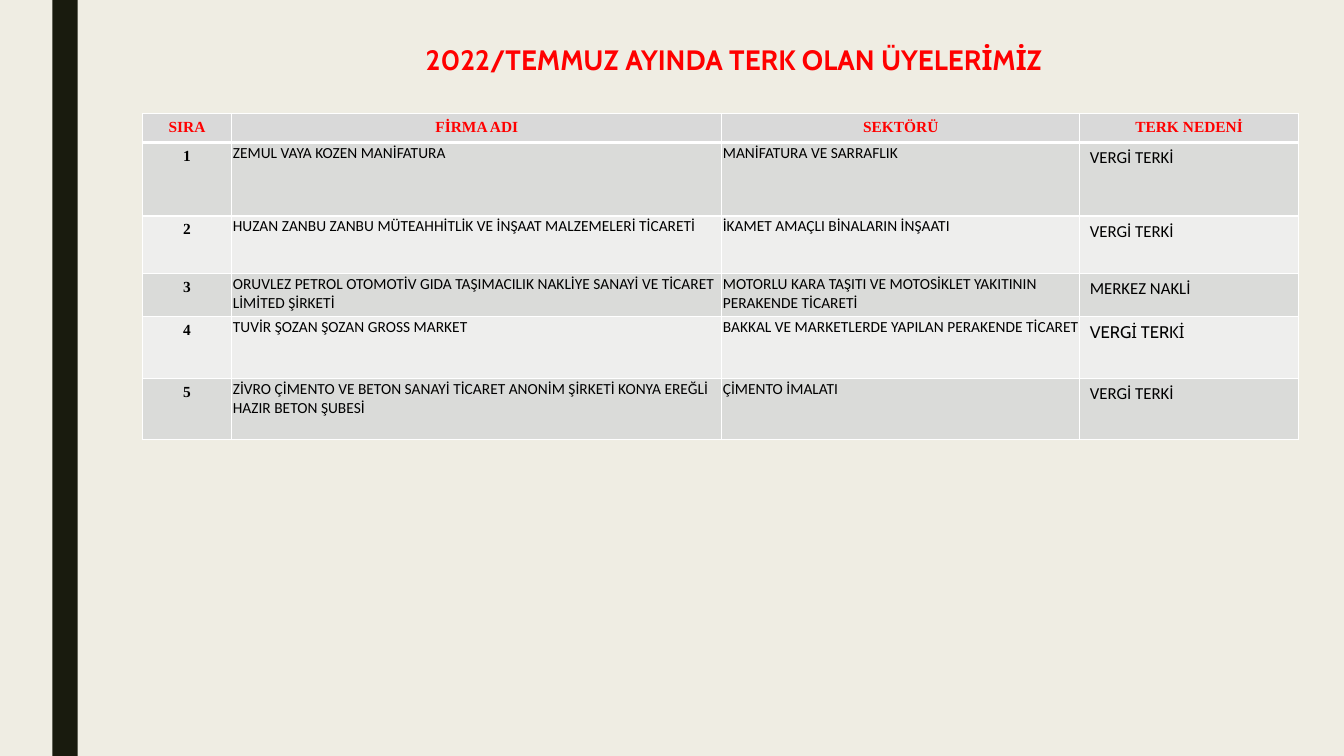
from dataclasses import dataclass

from lxml import etree
from pptx import Presentation
from pptx import util as u
from pptx.dml.color import RGBColor
from pptx.enum import shapes, text
from pptx.oxml import ns

COLORS = {
    "background": "EFEDE3", "bar": "191B0E", "accent": "FF0000", "ink": "000000",
    "header": "D9D9D9", "odd": "DADBD9", "even": "EEEEED", "border": "FFFFFF",
}
SERIF, SANS, DISPLAY = "Times New Roman", "Calibri", "Cabin"
HEADINGS = ["SIRA", "FİRMA ADI", "SEKTÖRÜ", "TERK NEDENİ"]
COL_WIDTHS = [0.89, 4.86, 3.55, 2.17]
HEADER_HEIGHT = 0.27


@dataclass
class Member:
    firm: str
    sector: str
    reason: str
    height: float
    reason_font: str = SANS


MEMBERS = [
    Member("ZEMUL VAYA KOZEN MANİFATURA", "MANİFATURA VE SARRAFLIK", "VERGİ TERKİ", 0.73),
    Member("HUZAN ZANBU ZANBU MÜTEAHHİTLİK VE İNŞAAT MALZEMELERİ TİCARETİ",
           "İKAMET AMAÇLI BİNALARIN İNŞAATI", "VERGİ TERKİ", 0.57),
    Member("ORUVLEZ PETROL OTOMOTİV GIDA TAŞIMACILIK NAKLİYE SANAYİ VE TİCARET LİMİTED ŞİRKETİ",
           "MOTORLU KARA TAŞITI VE MOTOSİKLET YAKITININ PERAKENDE TİCARETİ", "MERKEZ NAKLİ", 0.43),
    Member("TUVİR ŞOZAN ŞOZAN GROSS MARKET",
           "BAKKAL VE MARKETLERDE YAPILAN PERAKENDE TİCARET", "VERGİ TERKİ", 0.61, DISPLAY),
    Member("ZİVRO ÇİMENTO VE BETON SANAYİ TİCARET ANONİM ŞİRKETİ KONYA EREĞLİ HAZIR BETON ŞUBESİ",
           "ÇİMENTO İMALATI", "VERGİ TERKİ", 0.61),
]


def rgb(name: str) -> RGBColor:
    return RGBColor.from_string(COLORS[name])


def write(tf, content: str, *, font: str = SANS, size: float = 11, color: str = "ink",
          bold: bool = False, center: bool = False, spacing: float | None = None) -> None:
    p = tf.paragraphs[0]
    p.alignment = text.PP_ALIGN.CENTER if center else text.PP_ALIGN.LEFT
    p.line_spacing = spacing
    r = p.add_run()
    r.text = content
    r.font.name, r.font.size, r.font.bold = font, u.Pt(size), bold
    r.font.color.rgb = rgb(color)


def style_cell(cell, fill: str, top: float = 1, bottom: float = 1, tight: bool = False) -> None:
    cell.fill.solid()
    cell.fill.fore_color.rgb = rgb(fill)
    if tight:
        cell.margin_left = cell.margin_right = cell.margin_top = u.Inches(0.01)
        cell.margin_bottom = 0
    # Borders come before the fill in the cell properties
    props = cell._tc.get_or_add_tcPr()
    for i, (side, width) in enumerate({"L": 1, "R": 1, "T": top, "B": bottom}.items()):
        ln = etree.Element(ns.qn(f"a:ln{side}"), w=str(u.Pt(width)))
        solid = etree.SubElement(ln, ns.qn("a:solidFill"))
        etree.SubElement(solid, ns.qn("a:srgbClr"), val=COLORS["border"])
        props.insert(i, ln)


def add_bar(slide) -> None:
    sp = slide.shapes.add_shape(shapes.MSO_SHAPE.RECTANGLE, u.Inches(0.52), 0,
                                u.Inches(0.25), u.Inches(7.5))
    sp.shadow.inherit = False
    sp.fill.solid()
    sp.fill.fore_color.rgb = rgb("bar")
    sp.line.fill.background()


def add_title(slide) -> None:
    sp = slide.shapes.add_textbox(u.Inches(3.33), u.Inches(0.41), u.Inches(7.9), u.Inches(0.53))
    tf = sp.text_frame
    tf.word_wrap = True
    write(tf, "2022/TEMMUZ AYINDA TERK OLAN ÜYELERİMİZ", font=DISPLAY, size=20,
          color="accent", bold=True, center=True, spacing=0.89)


def add_member_table(slide) -> None:
    heights = [HEADER_HEIGHT] + [m.height for m in MEMBERS]
    table = slide.shapes.add_table(len(heights), len(COL_WIDTHS), u.Inches(1.41), u.Inches(1.13),
                                   u.Inches(sum(COL_WIDTHS)), u.Inches(sum(heights))).table
    for column, width in zip(table.columns, COL_WIDTHS):
        column.width = u.Inches(width)
    for row, height in zip(table.rows, heights):
        row.height = u.Inches(height)

    # Header row
    for cell, heading in zip(table.rows[0].cells, HEADINGS):
        style_cell(cell, "header", bottom=3)
        write(cell.text_frame, heading, font=SERIF, color="accent", bold=True, center=True)

    # Member rows
    for n, m in enumerate(MEMBERS, start=1):
        number, firm, sector, reason = cells = list(table.rows[n].cells)
        for cell in cells:
            style_cell(cell, "odd" if n % 2 else "even", top=3 if n == 1 else 1,
                       tight=cell in (firm, sector))
        write(number.text_frame, str(n), font=SERIF, bold=True, center=True)
        write(firm.text_frame, m.firm)
        write(sector.text_frame, m.sector)
        write(reason.text_frame, m.reason, font=m.reason_font, size=12)


def main() -> None:
    prs = Presentation()
    prs.slide_width, prs.slide_height = u.Inches(13.33), u.Inches(7.5)
    slide = prs.slides.add_slide(prs.slide_layouts[6])
    slide.background.fill.solid()
    slide.background.fill.fore_color.rgb = rgb("background")
    add_bar(slide)
    add_title(slide)
    add_member_table(slide)
    prs.save("out.pptx")


if __name__ == "__main__":
    main()
